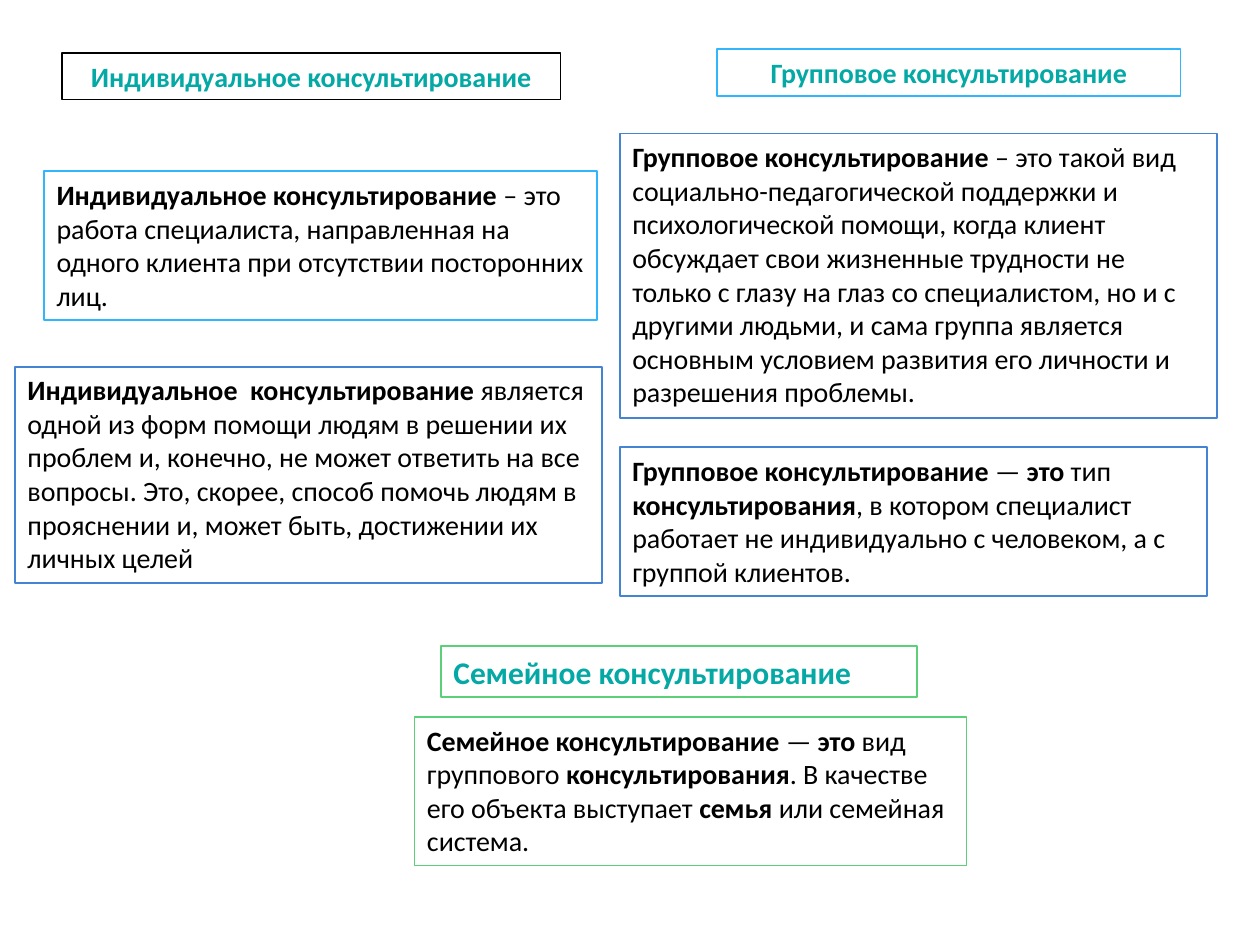
import pptx
import pptx.dml.color
import pptx.enum.text
import pptx.util
from pptx.util import Inches

BLACK, TEAL, SKY, BLUE, GREEN = "000000", "04A8A4", "31B6FD", "4584D3", "5BD078"
LEFT = pptx.enum.text.PP_ALIGN.LEFT
CENTER = pptx.enum.text.PP_ALIGN.CENTER


def rgb(value):
    return pptx.dml.color.RGBColor.from_string(value)


def add_framed_text(place, border, runs, color=BLACK, size=16, align=LEFT):
    """Add a bordered text box; its runs alternate bold and regular."""
    box = slide.shapes.add_textbox(*[Inches(length) for length in place])
    box.fill.solid()
    box.fill.fore_color.rgb = rgb("FFFFFF")
    box.line.color.rgb = rgb(border)
    box.line.width = pptx.util.Pt(1)
    frame = box.text_frame
    frame.word_wrap = True
    frame.auto_size = pptx.enum.text.MSO_AUTO_SIZE.SHAPE_TO_FIT_TEXT
    paragraph = frame.paragraphs[0]
    paragraph.alignment = align
    for index, text in enumerate(runs):
        run = paragraph.add_run()
        run.text = text
        run.font.name = "Calibri"
        run.font.size = pptx.util.Pt(size)
        run.font.bold = index % 2 == 0
        run.font.color.rgb = rgb(color)


presentation = pptx.Presentation()
presentation.slide_width = Inches(10)
presentation.slide_height = Inches(7.5)
slide = presentation.slides.add_slide(presentation.slide_layouts[6])

# Headings of the three kinds of counselling
headings = [
    ((0.49, 0.42, 3.96, 0.37), BLACK, "Индивидуальное консультирование", 16, CENTER),
    ((5.69, 0.39, 3.68, 0.37), SKY, "Групповое консультирование", 16, CENTER),
    ((3.5, 5.13, 3.78, 0.4), GREEN, "Семейное консультирование", 18, LEFT),
]
for place, border, heading, size, align in headings:
    add_framed_text(place, border, [heading], TEAL, size, align)

# Definitions, with the key terms in bold
definitions = [
    # Individual
    ((0.35, 1.36, 4.39, 1.18), SKY, [
        "Индивидуальное консультирование",
        " – это работа специалиста, направленная на одного клиента "
        "при отсутствии посторонних лиц.",
    ]),
    ((0.12, 2.91, 4.66, 1.72), BLUE, [
        "Индивидуальное  консультирование",
        " является одной из форм помощи людям в решении их проблем и, конечно, "
        "не может ответить на все вопросы. Это, скорее, способ помочь людям "
        "в прояснении и, может быть, достижении их личных целей",
    ]),
    # Group
    ((4.92, 1.06, 4.74, 2.26), BLUE, [
        "Групповое консультирование ",
        "– это такой вид социально-педагогической поддержки и психологической "
        "помощи, когда клиент обсуждает свои жизненные трудности не только "
        "с глазу на глаз со специалистом, но и с другими людьми, и сама группа "
        "является основным условием развития его личности и разрешения проблемы.",
    ]),
    ((4.92, 3.55, 4.66, 1.18), BLUE, [
        "Групповое консультирование", " — ", "это", " тип  ", "консультирования",
        ", в котором специалист работает не индивидуально с человеком, "
        "а с группой клиентов.",
    ]),
    # Family
    ((3.29, 5.69, 4.38, 1.18), GREEN, [
        "Семейное консультирование", " — ", "это", " вид группового ",
        "консультирования", ". В качестве его объекта выступает ",
        "семья ", "или семейная система.",
    ]),
]
for place, border, runs in definitions:
    add_framed_text(place, border, runs)

presentation.save("out.pptx")
